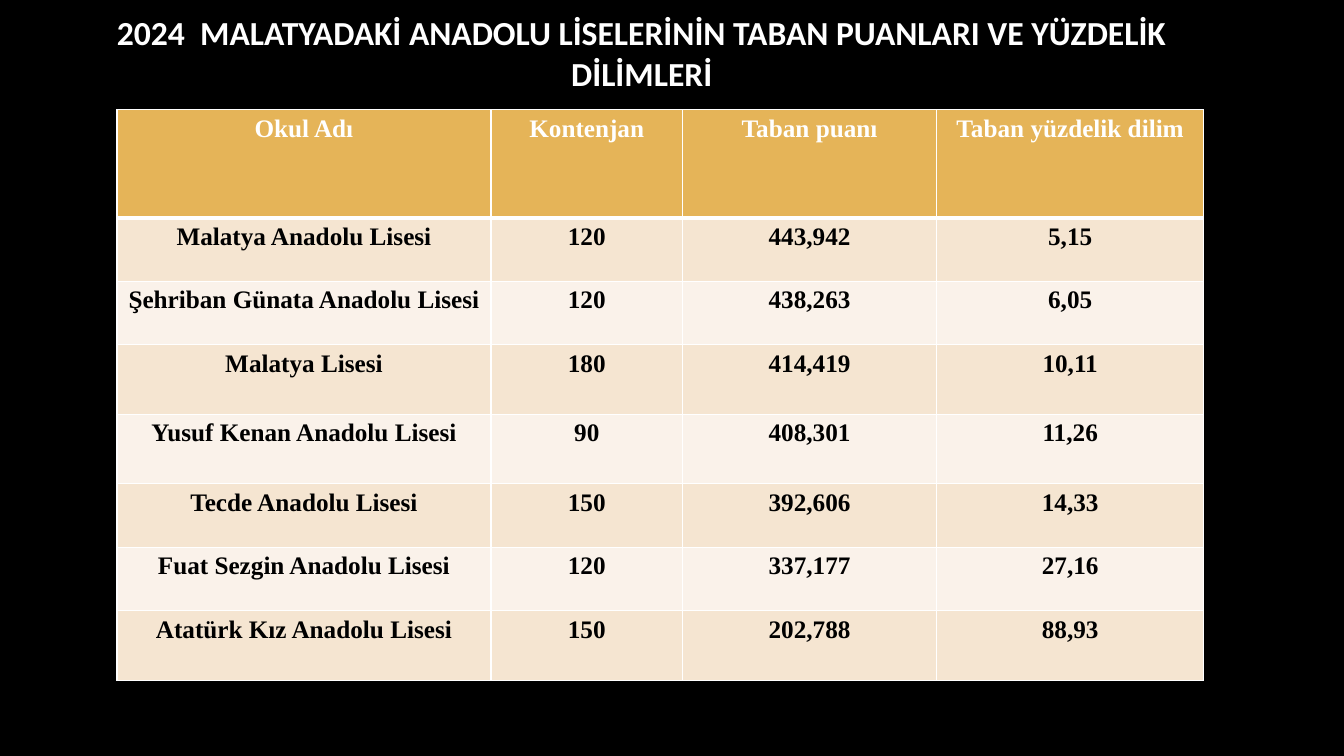
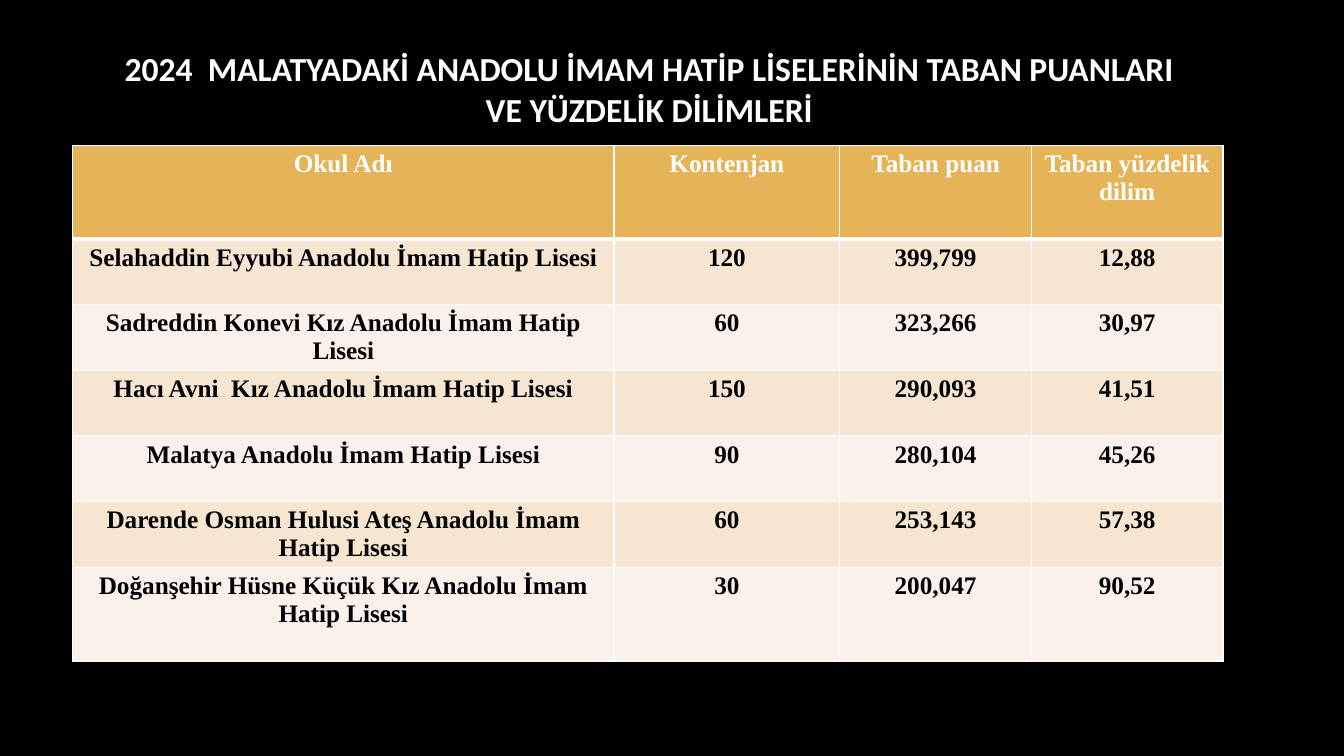
from dataclasses import dataclass

from lxml.etree import SubElement
from pptx import Presentation
from pptx.dml.color import RGBColor
from pptx.enum.text import MSO_ANCHOR as Anchor, MSO_AUTO_SIZE as AutoSize, PP_ALIGN as Align
from pptx.oxml.ns import qn
from pptx.slide import Slide
from pptx.table import _Cell as Cell
from pptx.text.text import TextFrame
from pptx.util import Emu, Pt

EMU_PER_PX = 9144
SLIDE_WIDTH, SLIDE_HEIGHT = 1333, 750
TITLE_ONLY_LAYOUT = 5

BLACK = "000000"
WHITE = "FFFFFF"
HEADER_FILL = "E5B458"
BAND_FILLS = ("F5E5D1", "FAF2EA")

TITLE_FONT, TITLE_SIZE = "Calibri", 24
TABLE_FONT, TABLE_SIZE = "Times New Roman", 18
THIN, THICK = 1, 3


@dataclass(frozen=True)
class Box:
    left: int
    top: int
    width: int
    height: int

    def emu(self) -> tuple[Emu, Emu, Emu, Emu]:
        return px(self.left), px(self.top), px(self.width), px(self.height)


@dataclass(frozen=True)
class ScoreSlide:
    title: str
    title_box: Box
    table_left: int
    table_top: int
    column_widths: tuple[int, ...]
    row_heights: tuple[int, ...]
    rows: tuple[tuple[str, ...], ...]

    def table_box(self) -> Box:
        return Box(self.table_left, self.table_top,
                   sum(self.column_widths), sum(self.row_heights))


SCORE_SLIDES = (
    ScoreSlide(
        title="2024  MALATYADAKİ ANADOLU LİSELERİNİN TABAN PUANLARI VE YÜZDELİK DİLİMLERİ",
        title_box=Box(64, 17, 1145, 70),
        table_left=116,
        table_top=109,
        column_widths=(371, 190, 252, 265),
        row_heights=(107, 63, 63, 69, 69, 63, 63, 69),
        rows=(
            ("Okul Adı", "Kontenjan", "Taban puanı", "Taban yüzdelik dilim"),
            ("Malatya Anadolu Lisesi", "120", "443,942", "5,15"),
            ("Şehriban Günata Anadolu Lisesi", "120", "438,263", "6,05"),
            ("Malatya Lisesi", "180", "414,419", "10,11"),
            ("Yusuf Kenan Anadolu Lisesi", "90", "408,301", "11,26"),
            ("Tecde Anadolu Lisesi", "150", "392,606", "14,33"),
            ("Fuat Sezgin Anadolu Lisesi", "120", "337,177", "27,16"),
            ("Atatürk Kız Anadolu Lisesi", "150", "202,788", "88,93"),
        ),
    ),
    ScoreSlide(
        title="2024  MALATYADAKİ ANADOLU İMAM HATİP LİSELERİNİN TABAN PUANLARI VE YÜZDELİK DİLİMLERİ",
        title_box=Box(110, 53, 1068, 70),
        table_left=72,
        table_top=144,
        column_widths=(537, 224, 190, 190),
        row_heights=(93, 65, 65, 65, 65, 65, 93),
        rows=(
            ("Okul Adı", "Kontenjan", "Taban puan", "Taban yüzdelik dilim"),
            ("Selahaddin Eyyubi Anadolu İmam Hatip Lisesi", "120", "399,799", "12,88"),
            ("Sadreddin Konevi Kız Anadolu İmam Hatip Lisesi", "60", "323,266", "30,97"),
            ("Hacı Avni  Kız Anadolu İmam Hatip Lisesi", "150", "290,093", "41,51"),
            ("Malatya Anadolu İmam Hatip Lisesi", "90", "280,104", "45,26"),
            ("Darende Osman Hulusi Ateş Anadolu İmam Hatip Lisesi", "60", "253,143", "57,38"),
            ("Doğanşehir Hüsne Küçük Kız Anadolu İmam Hatip Lisesi", "30", "200,047", "90,52"),
        ),
    ),
)


def px(length: int) -> Emu:
    return Emu(length * EMU_PER_PX)


def color(hex_value: str) -> RGBColor:
    return RGBColor.from_string(hex_value)


def write_text(text_frame: TextFrame, text: str, font_name: str, size: int, hex_value: str) -> None:
    text_frame.text = text
    paragraph = text_frame.paragraphs[0]
    paragraph.alignment = Align.CENTER
    font = paragraph.runs[0].font
    font.name = font_name
    font.size = Pt(size)
    font.bold = True
    font.color.rgb = color(hex_value)


def set_borders(cell: Cell, top: int, bottom: int) -> None:
    properties = cell._tc.get_or_add_tcPr()
    widths = {"a:lnL": THIN, "a:lnR": THIN, "a:lnT": top, "a:lnB": bottom}
    for position, (tag, width) in enumerate(widths.items()):
        line = SubElement(properties, qn(tag), w=str(Pt(width)))
        fill = SubElement(line, qn("a:solidFill"))
        SubElement(fill, qn("a:srgbClr"), val=WHITE)
        properties.insert(position, line)


def add_title(slide: Slide, content: ScoreSlide) -> None:
    title = slide.shapes.title
    title.left, title.top, title.width, title.height = content.title_box.emu()
    text_frame = title.text_frame
    text_frame.word_wrap = True
    text_frame.auto_size = AutoSize.NONE
    text_frame.vertical_anchor = Anchor.MIDDLE
    write_text(text_frame, content.title, TITLE_FONT, TITLE_SIZE, WHITE)


def add_score_table(slide: Slide, content: ScoreSlide) -> None:
    table = slide.shapes.add_table(
        len(content.rows), len(content.column_widths), *content.table_box().emu()
    ).table
    table.horz_banding = False
    for column, width in zip(table.columns, content.column_widths):
        column.width = px(width)
    for row_index, (row, height) in enumerate(zip(table.rows, content.row_heights)):
        row.height = px(height)
        is_header = row_index == 0
        fill = HEADER_FILL if is_header else BAND_FILLS[(row_index - 1) % 2]
        for cell, text in zip(row.cells, content.rows[row_index]):
            cell.fill.solid()
            cell.fill.fore_color.rgb = color(fill)
            write_text(cell.text_frame, text, TABLE_FONT, TABLE_SIZE,
                       WHITE if is_header else BLACK)
            set_borders(cell, top=THICK if row_index == 1 else THIN,
                        bottom=THICK if is_header else THIN)


def main() -> None:
    presentation = Presentation()
    presentation.slide_width = px(SLIDE_WIDTH)
    presentation.slide_height = px(SLIDE_HEIGHT)
    background = presentation.slide_master.background.fill
    background.solid()
    background.fore_color.rgb = color(BLACK)
    for content in SCORE_SLIDES:
        slide = presentation.slides.add_slide(presentation.slide_layouts[TITLE_ONLY_LAYOUT])
        add_title(slide, content)
        add_score_table(slide, content)
    presentation.save("out.pptx")


if __name__ == "__main__":
    main()
